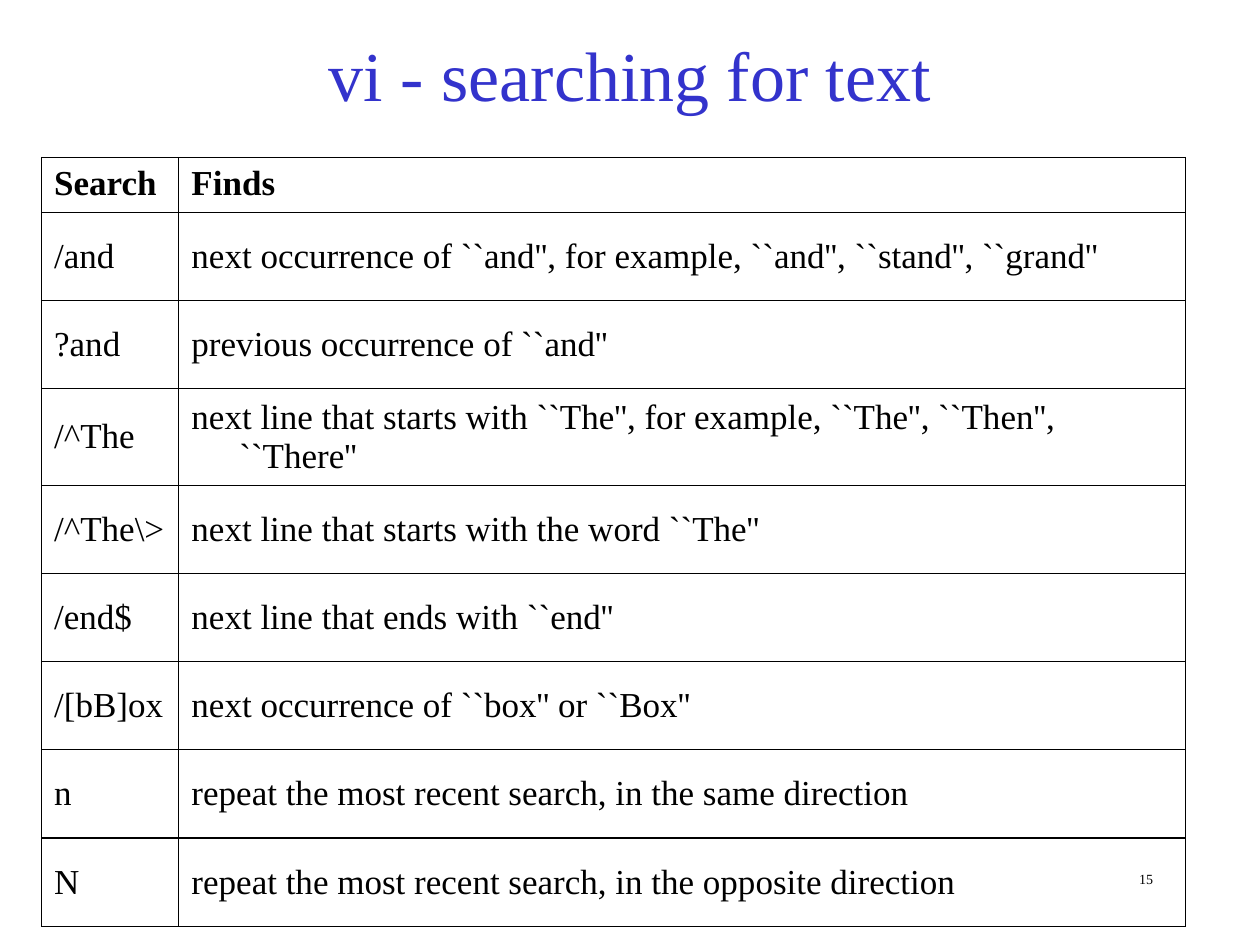
from lxml.etree import SubElement
from pptx import Presentation
from pptx.dml.color import RGBColor
from pptx.enum.text import MSO_ANCHOR, PP_ALIGN
from pptx.oxml.ns import qn
from pptx.util import Inches, Pt

COLORS = {"text": "000000", "title": "3333CC", "line": "000000"}
FONT = "Times New Roman"
ROWS = [
    ("Search", "Finds"),
    ("/and", "next occurrence of ``and'', for example, ``and'', ``stand'', ``grand''"),
    ("?and", "previous occurrence of ``and''"),
    ("/^The", "next line that starts with ``The'', for example, ``The'', ``Then'', ``There''"),
    ("/^The\\>", "next line that starts with the word ``The''"),
    ("/end$", "next line that ends with ``end''"),
    ("/[bB]ox", "next occurrence of ``box'' or ``Box''"),
    ("n", "repeat the most recent search, in the same direction"),
    ("N", "repeat the most recent search, in the opposite direction"),
]
WIDTHS = (1.09, 7.99)
HEAD, ROW = 0.43, 0.7


def write(frame, text, size=20, color="text", bold=False,
          align=PP_ALIGN.LEFT, hang=0):
    frame.word_wrap = True
    para = frame.paragraphs[0]
    para.alignment = align
    if hang:
        props = para._p.get_or_add_pPr()
        props.set("marL", str(Inches(hang)))
        props.set("indent", str(-Inches(hang)))
    run = para.add_run()
    run.text = text
    font = run.font
    font.name, font.size, font.bold = FONT, Pt(size), bold
    font.color.rgb = RGBColor.from_string(COLORS[color])


def place(shape, left, top, width, height):
    shape.left, shape.top = Inches(left), Inches(top)
    shape.width, shape.height = Inches(width), Inches(height)


def border(cell):
    props = cell._tc.get_or_add_tcPr()
    for i, side in enumerate(("lnL", "lnR", "lnT", "lnB")):
        line = props.makeelement(qn(f"a:{side}"), {"w": str(Pt(0.75))})
        fill = SubElement(line, qn("a:solidFill"))
        SubElement(fill, qn("a:srgbClr"), val=COLORS["line"])
        props.insert(i, line)  # borders come before the fill


def add_title(slide, text):
    title = slide.shapes.title
    place(title, 0.75, 0.08, 8.5, 1)
    title.text_frame.vertical_anchor = MSO_ANCHOR.MIDDLE
    write(title.text_frame, text, size=40, color="title", align=PP_ALIGN.CENTER)


def add_number(slide, text):
    box = slide.shapes.add_textbox(
        Inches(7.17), Inches(6.83), Inches(2.08), Inches(0.5))
    box.text_frame.margin_top = Inches(0.08)
    write(box.text_frame, text, size=8, align=PP_ALIGN.RIGHT)


def add_grid(slide, rows):
    height = HEAD + ROW * (len(rows) - 1)
    table = slide.shapes.add_table(
        len(rows), len(WIDTHS), Inches(0.33), Inches(1.25),
        Inches(sum(WIDTHS)), Inches(height)).table
    table.first_row = table.horz_banding = False
    for col, width in zip(table.columns, WIDTHS):
        col.width = Inches(width)
    for r, texts in enumerate(rows):
        head = r == 0
        table.rows[r].height = Inches(HEAD if head else ROW)
        for c, text in enumerate(texts):
            cell = table.cell(r, c)
            cell.fill.background()
            cell.vertical_anchor = MSO_ANCHOR.TOP if head else MSO_ANCHOR.MIDDLE
            border(cell)
            write(cell.text_frame, text, bold=head, hang=0.38)


def main():
    deck = Presentation()
    deck.slide_width, deck.slide_height = Inches(10), Inches(7.5)
    slide = deck.slides.add_slide(deck.slide_layouts[5])
    add_title(slide, "vi - searching for text")
    add_number(slide, "15")
    add_grid(slide, ROWS)
    deck.save("out.pptx")


if __name__ == "__main__":
    main()
